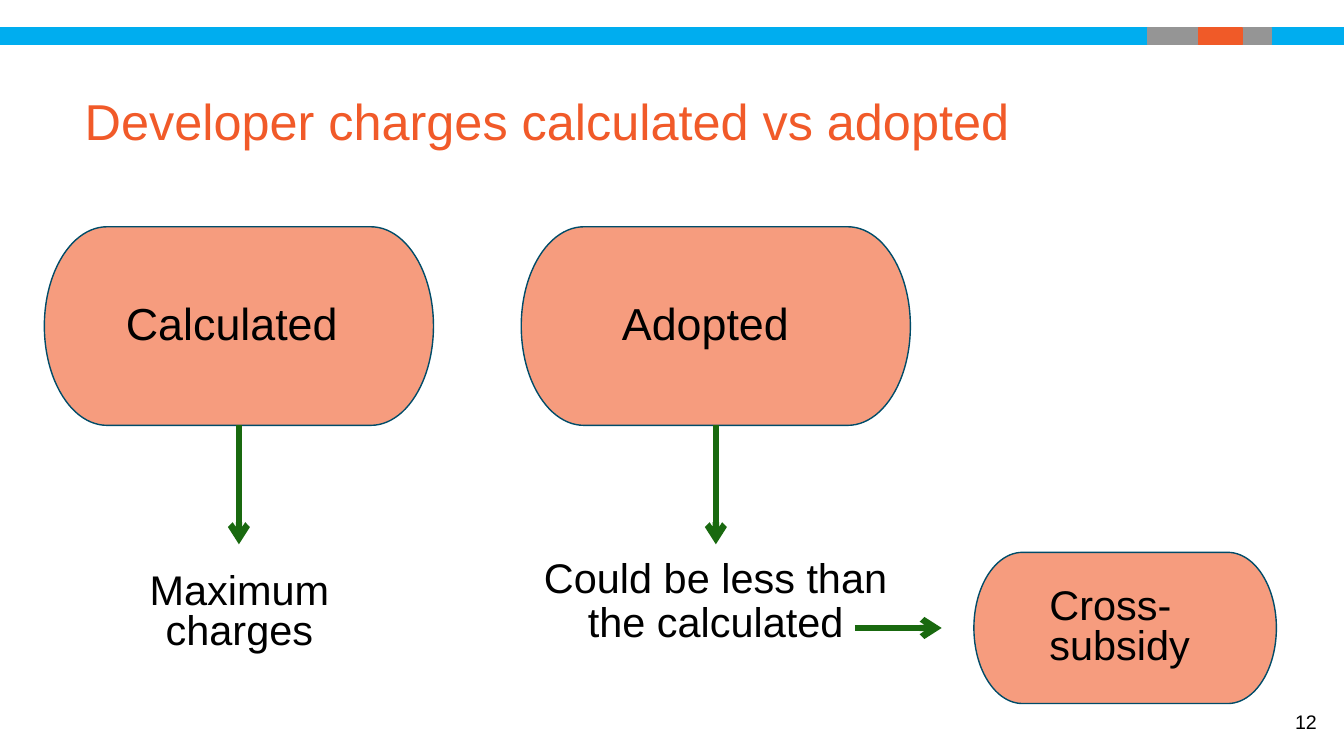
from lxml.etree import SubElement
from pptx import Presentation
from pptx.dml.color import RGBColor
from pptx.enum.shapes import MSO_CONNECTOR, MSO_SHAPE
from pptx.enum.text import MSO_ANCHOR, MSO_AUTO_SIZE, PP_ALIGN
from pptx.oxml.ns import qn
from pptx.util import Inches, Pt

BLUE = RGBColor(0x00, 0xAD, 0xEF)
GREY = RGBColor(0x95, 0x95, 0x95)
ORANGE = RGBColor(0xF0, 0x5A, 0x28)
TITLE_ORANGE = RGBColor(0xF1, 0x5A, 0x29)
SALMON = RGBColor(0xF6, 0x9C, 0x7E)
NAVY = RGBColor(0x00, 0x4C, 0x69)
GREEN = RGBColor(0x19, 0x69, 0x0F)
BLACK = RGBColor(0x00, 0x00, 0x00)

SLIDE_WIDTH, SLIDE_HEIGHT = 13.33, 7.5
NODE_WIDTH, NODE_HEIGHT = 3.86, 1.97
ARROW_LENGTH = 1.18


def set_attributes(target, values):
    for name, value in values.items():
        setattr(target, name, value)


def write_text(shape, text, size, color=BLACK, anchor=MSO_ANCHOR.TOP, **paragraph_format):
    frame = shape.text_frame
    set_attributes(frame, {"word_wrap": True, "auto_size": MSO_AUTO_SIZE.NONE,
                           "vertical_anchor": anchor})
    paragraph = frame.paragraphs[0]
    set_attributes(paragraph, {"alignment": PP_ALIGN.LEFT, **paragraph_format})
    run = paragraph.add_run()
    run.text = text
    set_attributes(run.font, {"name": "Arial", "size": Pt(size)})
    run.font.color.rgb = color


def add_text(slide, box, text, size, **text_format):
    shape = slide.shapes.add_textbox(*map(Inches, box))
    write_text(shape, text, size, **text_format)


def add_block(slide, kind, box, fill, outline):
    shape = slide.shapes.add_shape(kind, *map(Inches, box))
    shape.shadow.inherit = False
    shape.fill.solid()
    shape.fill.fore_color.rgb = fill
    shape.line.color.rgb = outline
    shape.line.width = Pt(1)


def add_arrow(slide, start, end):
    arrow = slide.shapes.add_connector(MSO_CONNECTOR.STRAIGHT, *map(Inches, (*start, *end)))
    arrow.line.color.rgb = GREEN
    arrow.line.width = Pt(4.5)
    SubElement(arrow.line._get_or_add_ln(), qn("a:tailEnd"), type="arrow")
    SubElement(arrow._element.spPr, qn("a:effectLst"))


def add_header_band(slide, left, top, width, height):
    for offset, part_width, color in ((0, width, BLUE), (11.38, 1.23, GREY), (11.89, 0.43, ORANGE)):
        add_block(slide, MSO_SHAPE.RECTANGLE, (left + offset, top, part_width, height), color, color)


def add_title(slide, left, top, width, height):
    title = slide.shapes.title
    set_attributes(title, {"left": Inches(left), "top": Inches(top),
                           "width": Inches(width), "height": Inches(height)})
    write_text(title, "Developer charges calculated vs adopted", 36,
               color=TITLE_ORANGE, anchor=MSO_ANCHOR.MIDDLE, line_spacing=0.9)


def add_charge(slide, left, top, label, label_left, label_width):
    add_block(slide, MSO_SHAPE.FLOWCHART_TERMINATOR, (left, top, NODE_WIDTH, NODE_HEIGHT), SALMON, NAVY)
    add_text(slide, (left + label_left, top + 0.63, label_width, 0.98), label, 32)
    center, bottom = left + NODE_WIDTH / 2, top + NODE_HEIGHT
    add_arrow(slide, (center, bottom), (center, bottom + ARROW_LENGTH))


def add_outcome(slide, box, text, line_spacing):
    add_text(slide, box, text, 29.6, alignment=PP_ALIGN.CENTER, line_spacing=line_spacing)


def add_cross_subsidy(slide, left, top, width, height):
    middle = top + height / 2
    add_arrow(slide, (left - 1.18, middle), (left - 0.32, middle))
    add_block(slide, MSO_SHAPE.FLOWCHART_TERMINATOR, (left, top, width, height), SALMON, NAVY)
    add_text(slide, (left + 0.65, top + 0.31, 1.66, 0.98), "Cross-subsidy", 29.6, line_spacing=0.8)


def main():
    presentation = Presentation()
    set_attributes(presentation, {"slide_width": Inches(SLIDE_WIDTH),
                                  "slide_height": Inches(SLIDE_HEIGHT)})
    slide = presentation.slides.add_slide(presentation.slide_layouts.get_by_name("Title Only"))
    add_header_band(slide, 0, 0.28, SLIDE_WIDTH, 0.16)
    add_title(slide, 0.74, 0.6, 10.1, 1.26)
    add_charge(slide, 0.44, 2.25, "Calculated", 0.71, 2.85)
    add_outcome(slide, (0.95, 5.64, 2.85, 0.98), "Maximum charges", 0.8)
    add_charge(slide, 5.17, 2.25, "Adopted", 0.9, 2.05)
    add_outcome(slide, (5.29, 5.48, 3.62, 1.5), "Could be less than the calculated", 0.9)
    add_cross_subsidy(slide, 9.66, 5.48, 3, 1.5)
    add_text(slide, (11.73, 6.96, 1.43, 0.4), "12", 14,
             anchor=MSO_ANCHOR.MIDDLE, alignment=PP_ALIGN.RIGHT)
    presentation.save("out.pptx")


if __name__ == "__main__":
    main()
